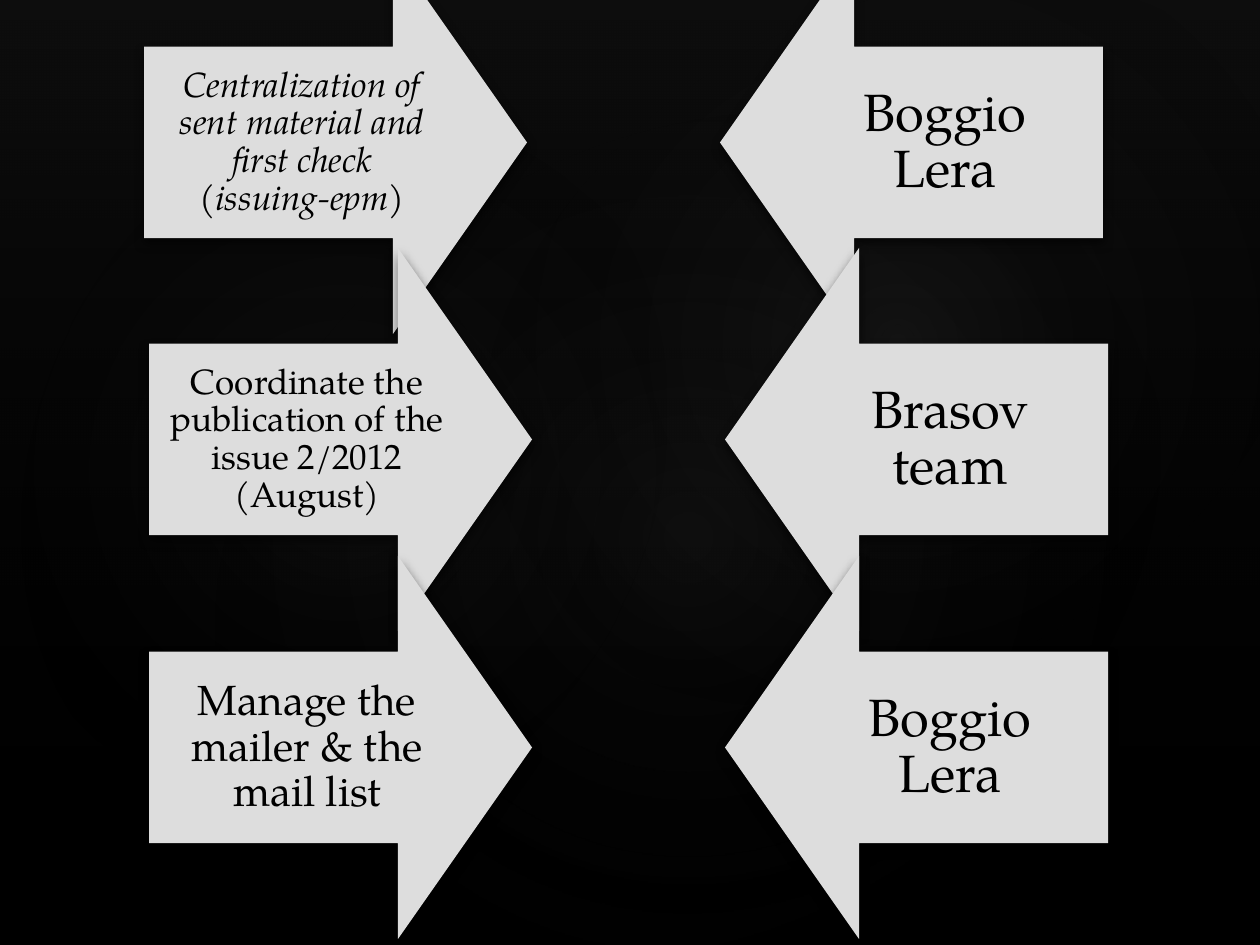
from lxml import etree
from pptx import Presentation
from pptx.dml.color import RGBColor
from pptx.enum.shapes import MSO_SHAPE
from pptx.enum.text import MSO_ANCHOR, PP_ALIGN
from pptx.oxml import parse_xml
from pptx.oxml.ns import nsdecls, qn
from pptx.util import Emu, Pt

RECTANGLE = MSO_SHAPE.RECTANGLE
OVAL = MSO_SHAPE.OVAL
RIGHT_ARROW = MSO_SHAPE.RIGHT_ARROW
LEFT_ARROW = MSO_SHAPE.LEFT_ARROW
MIDDLE = MSO_ANCHOR.MIDDLE
CENTER = PP_ALIGN.CENTER

BLACK = RGBColor(0x00, 0x00, 0x00)
CHARCOAL = RGBColor(0x26, 0x26, 0x26)
GLOW_GRAY = RGBColor(0x94, 0x94, 0x94)
ARROW_GRAY = RGBColor(0xDD, 0xDD, 0xDD)
FONT = "TeX Gyre Pagella"

PAGE_WIDTH, PAGE_HEIGHT = 1260, 945
ARROW_SIZE = 383
OWNER_OFFSET = 576
LINEAR = '<a:lin ang="5400000" scaled="0"/>'
RADIAL = '<a:path path="circle"><a:fillToRect l="50000" t="50000" r="50000" b="50000"/></a:path>'

GLOWS = [
    ((189, 144, 998, 786), 328.7, 7),
    ((-38, 161, 764, 617), 294.3, 8),
    ((451, 16, 893, 655), 328.7, 8),
]
ROWS = [
    ((144, -49), "Centralization of sent material and first check (issuing-epm)", 20, 20, True,
     "Boggio Lera"),
    ((149, 248), "Coordinate the publication of the issue 2/2012 (August)", 20, 20, False,
     "Brasov team"),
    ((149, 556), "Manage the mailer & the mail list", 24, 24, False, "Boggio Lera"),
]


def px(length):
    return Emu(round(length * 914400 / 126))


def add_plain_shape(shapes, kind, box):
    shape = shapes.add_shape(kind, *map(px, box))
    shape.shadow.inherit = False
    shape.line.fill.background()
    return shape


def set_gradient(shape, stops, direction):
    stop_xml = "".join(
        f'<a:gs pos="{position * 1000}"><a:srgbClr val="{color}">'
        f'<a:alpha val="{opacity * 1000}"/></a:srgbClr></a:gs>'
        for position, color, opacity in stops
    )
    gradient = parse_xml(
        f'<a:gradFill {nsdecls("a")} rotWithShape="1"><a:gsLst>{stop_xml}</a:gsLst>{direction}</a:gradFill>'
    )
    shape._element.spPr.find(qn("a:prstGeom")).addnext(gradient)


def add_drop_shadow(shape):
    effects = shape._element.spPr.find(qn("a:effectLst"))
    shadow = etree.SubElement(effects, qn("a:outerShdw"), blurRad=str(Pt(6)),
                              dist=str(Pt(3)), dir="5400000", rotWithShape="0")
    color = etree.SubElement(shadow, qn("a:srgbClr"), val=str(BLACK))
    etree.SubElement(color, qn("a:alpha"), val="60000")


def add_backdrop(page, box):
    page.background.fill.solid()
    page.background.fill.fore_color.rgb = BLACK
    left, top, width, height = box
    shade = add_plain_shape(page.shapes, RECTANGLE, box)
    set_gradient(shade, [(0, CHARCOAL, 36), (100, BLACK, 10)], LINEAR)
    for (x, y, glow_width, glow_height), angle, opacity in GLOWS:
        glow = add_plain_shape(page.shapes, OVAL, (left + x, top + y, glow_width, glow_height))
        glow.rotation = angle
        set_gradient(glow, [(0, GLOW_GRAY, opacity), (58, BLACK, 0)], RADIAL)


def add_arrow(shapes, kind, box, text, size, inset, italic=False):
    arrow = add_plain_shape(shapes, kind, box)
    arrow.adjustments[0] = 0.5
    arrow.adjustments[1] = 0.35
    arrow.fill.solid()
    arrow.fill.fore_color.rgb = ARROW_GRAY
    add_drop_shadow(arrow)
    frame = arrow.text_frame
    frame.word_wrap = True
    frame.vertical_anchor = MIDDLE
    frame.margin_left = frame.margin_right = px(inset)
    frame.margin_top = frame.margin_bottom = px(inset)
    para = frame.paragraphs[0]
    para.text = text
    para.alignment = CENTER
    para.line_spacing = 0.9
    para.font.name = FONT
    para.font.size = Pt(size)
    para.font.italic = italic
    para.font.color.rgb = BLACK


def add_row(page, corner, task, size, inset, italic, owner):
    left, top = corner
    shapes = page.shapes.add_group_shape().shapes
    add_arrow(shapes, RIGHT_ARROW, (left, top, ARROW_SIZE, ARROW_SIZE), task, size, inset, italic)
    add_arrow(shapes, LEFT_ARROW, (left + OWNER_OFFSET, top, ARROW_SIZE, ARROW_SIZE), owner, 30, 29)


def main():
    deck = Presentation()
    deck.slide_width, deck.slide_height = px(PAGE_WIDTH), px(PAGE_HEIGHT)
    page = deck.slides.add_slide(deck.slide_layouts[6])
    add_backdrop(page, (0, 0, PAGE_WIDTH, PAGE_HEIGHT))
    for row in ROWS:
        add_row(page, *row)
    deck.save("out.pptx")


if __name__ == "__main__":
    main()
